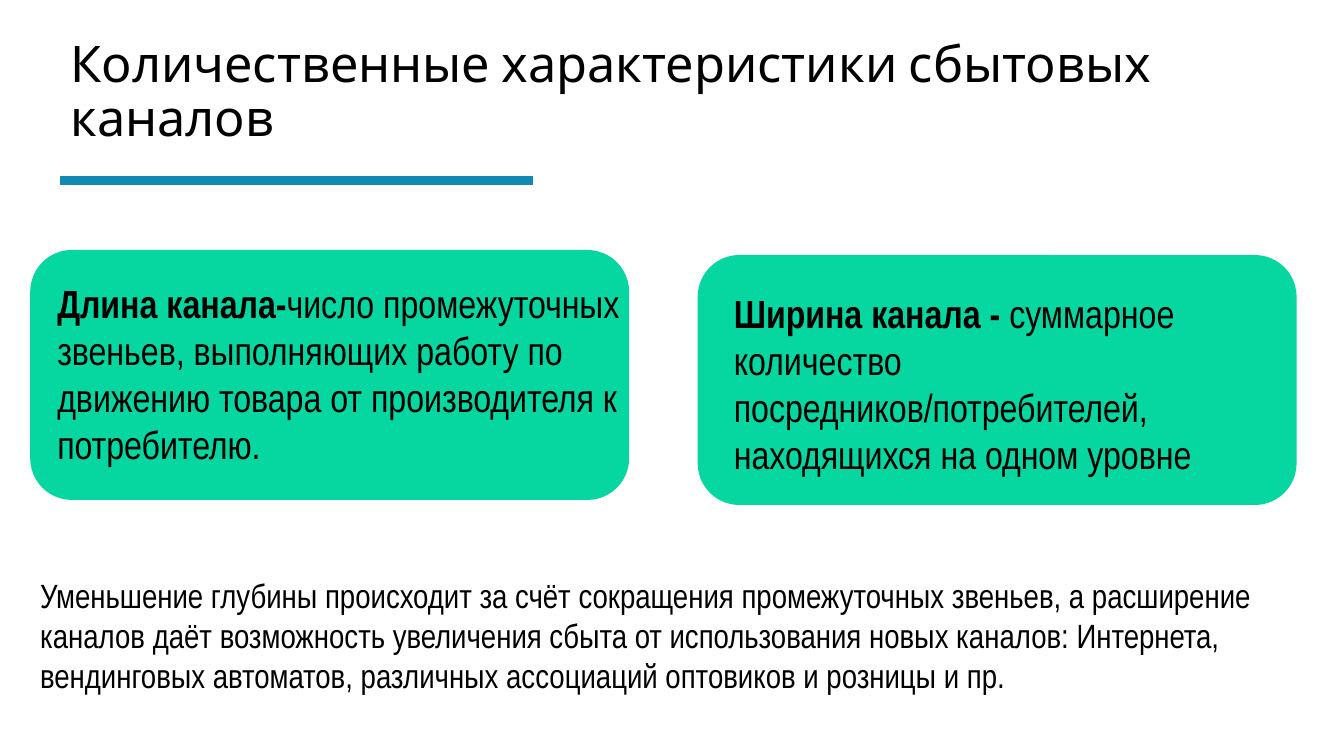
import pptx
import pptx.dml.color
import pptx.enum.shapes
import pptx.enum.text
import pptx.util
from pptx.util import Inches

BODY_FONT = "Arial Narrow"
CARD_W, CARD_H = 5.94, 2.48


def rgb(value):
    """Turn a hex string into a colour."""
    return pptx.dml.color.RGBColor.from_string(value)


def add_text(slide, box, paragraphs, font, size, spacing=1.0):
    """Write paragraphs of (text, bold) runs in a wrapped text box."""
    tf = slide.shapes.add_textbox(*map(Inches, box)).text_frame
    tf.word_wrap = True
    tf.vertical_anchor = pptx.enum.text.MSO_ANCHOR.TOP
    for i, runs in enumerate(paragraphs):
        p = tf.paragraphs[0] if i == 0 else tf.add_paragraph()
        p.line_spacing = spacing
        for text, bold in runs:
            r = p.add_run()
            r.text = text
            formats = {"name": font, "size": pptx.util.Pt(size), "bold": bold}
            for key, value in formats.items():
                setattr(r.font, key, value)
            r.font.color.rgb = rgb("000000")


def add_title(slide, box, text):
    """Place the heading and the rule beneath it."""
    x, y, w, h = box
    add_text(slide, box, [[(text, False)]], "Cabin", 36, 0.88)
    rule_y = Inches(y + h + 0.13)
    line = slide.shapes.add_connector(
        pptx.enum.shapes.MSO_CONNECTOR.STRAIGHT,
        Inches(x), rule_y, Inches(x + 4.69), rule_y)
    line.line.color.rgb = rgb("118AB2")
    line.line.width = pptx.util.Pt(6)
    sp_pr = line._element.spPr
    sp_pr.append(pptx.oxml.parse_xml(
        '<a:effectLst xmlns:a="http://schemas.openxmlformats.org/drawingml/2006/main"/>'))


def add_card(slide, box, inset, text_width, paragraphs):
    """Draw a rounded card with its definition inset from the corner."""
    x, y, w, h = box
    sp = slide.shapes.add_shape(
        pptx.enum.shapes.MSO_SHAPE.ROUNDED_RECTANGLE, *map(Inches, box))
    sp.shadow.inherit = False
    sp.fill.solid()
    sp.fill.fore_color.rgb = rgb("06D6A0")
    sp.line.fill.background()
    dx, dy = inset
    add_text(slide, (x + dx, y + dy, text_width, h - 2 * dy),
             paragraphs, BODY_FONT, 28)


def main():
    """Build the slide on sales channel characteristics."""
    prs = pptx.Presentation()
    prs.slide_width, prs.slide_height = Inches(13.33), Inches(7.5)
    slide = prs.slides.add_slide(prs.slide_layouts[6])
    add_title(slide, (0.6, 0.35, 10.95, 1.31),
              "Количественные характеристики сбытовых каналов")
    add_card(slide, (0.3, 2.48, CARD_W, CARD_H), (0.17, 0.24), 5.94, [
        [("Длина канала-", True),
         ("число промежуточных звеньев, выполняющих работу по движению "
          "товара от производителя к потребителю.", False)]])
    add_card(slide, (6.92, 2.53, CARD_W, CARD_H), (0.26, 0.29), 5.6, [
        [("Ширина канала - ", True),
         ("суммарное количество посредников/потребителей,", False)],
        [("находящихся на одном уровне", False)]])
    add_text(slide, (0.3, 5.65, 13, 1.31), [
        [("Уменьшение глубины происходит за счёт сокращения промежуточных "
          "звеньев, а расширение каналов даёт возможность увеличения сбыта "
          "от использования новых каналов: Интернета, вендинговых автоматов, "
          "различных ассоциаций оптовиков и розницы и пр.", False)]],
        BODY_FONT, 24)
    prs.save("out.pptx")


if __name__ == "__main__":
    main()
